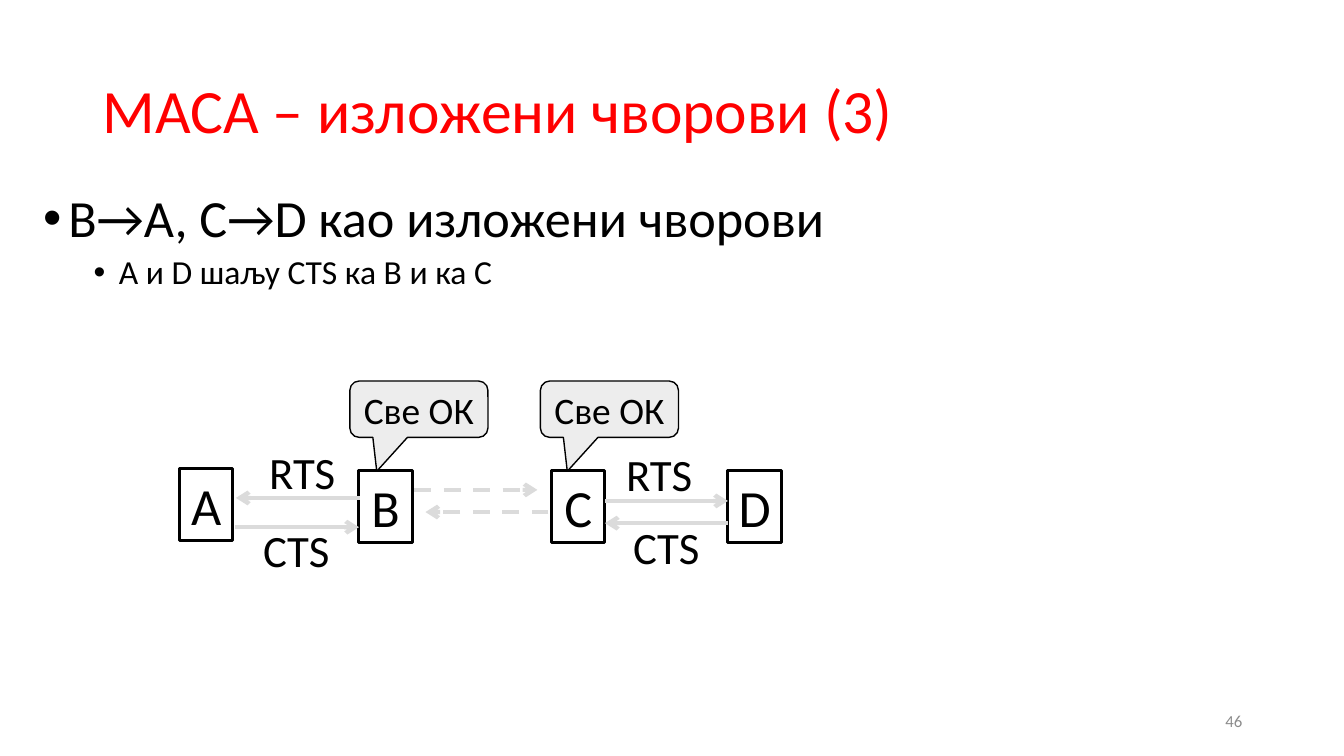
from dataclasses import dataclass

from lxml import etree
from pptx import Presentation
from pptx.dml.color import RGBColor
from pptx.enum.dml import MSO_LINE_DASH_STYLE as Dash
from pptx.enum.shapes import MSO_CONNECTOR, MSO_SHAPE
from pptx.enum.text import MSO_ANCHOR as Anchor, PP_ALIGN as Align
from pptx.oxml.ns import qn
from pptx.util import Pt

PX = 9144  # EMU per px, 100 px to the inch
FONT = "Calibri"
COLORS = {"title": "FF0000", "ink": "000000", "number": "8C8C8C",
          "arrow": "DBDBDB", "callout": "EDEDED"}


@dataclass(frozen=True)
class Box:
    left: int
    top: int
    width: int
    height: int

    def emu(self) -> tuple[int, ...]:
        return tuple(v * PX for v in (self.left, self.top, self.width, self.height))


@dataclass(frozen=True)
class Line:
    text: str
    size: float
    color: str = "ink"
    align: Align = Align.LEFT
    spacing: float = 1.0
    before: int = 0
    bullet_indent: int = 0  # px, 0 means no bullet
    level: int = 0


@dataclass(frozen=True)
class Arrow:
    start: int
    end: int
    y: int
    dashed: bool = False


@dataclass(frozen=True)
class Label:
    text: str
    left: int
    top: int


NODES = {"D": (722, 467), "C": (547, 467), "B": (356, 467), "A": (178, 465)}
ARROWS = [
    Arrow(600, 722, 497), Arrow(357, 234, 494),
    Arrow(411, 533, 486, True), Arrow(544, 422, 508, True),
    Arrow(722, 600, 519), Arrow(233, 356, 523),
]
LABELS = [Label("RTS", 621, 443), Label("RTS", 267, 441),
          Label("CTS", 628, 516), Label("CTS", 261, 519)]
CALLOUT_LEFTS = [536, 347]
CALLOUT_ADJUSTMENTS = [-0.305, 1.1, 0.167]


def rgb(name: str) -> RGBColor:
    return RGBColor.from_string(COLORS[name])


def add_bullet(paragraph, indent: int) -> None:
    properties = paragraph._p.get_or_add_pPr()
    properties.set("marL", str(indent * PX))
    properties.set("indent", str(-25 * PX))
    etree.SubElement(properties, qn("a:buFont"), typeface="Arial")
    etree.SubElement(properties, qn("a:buChar"), char="•")


def write(shape, lines: list[Line], anchor=Anchor.TOP, wrap=True,
          margins: tuple[int, int] = (10, 5)) -> None:
    """Fill a shape with lines; margins are horizontal and vertical px."""
    frame = shape.text_frame
    across, down = (margin * PX for margin in margins)
    frame_format = {
        "word_wrap": wrap, "vertical_anchor": anchor,
        "margin_left": across, "margin_right": across,
        "margin_top": down, "margin_bottom": down,
    }
    for name, value in frame_format.items():
        setattr(frame, name, value)
    for index, line in enumerate(lines):
        paragraph = frame.add_paragraph() if index else frame.paragraphs[0]
        paragraph_format = {
            "alignment": line.align, "line_spacing": line.spacing,
            "space_before": Pt(line.before), "level": line.level,
        }
        for name, value in paragraph_format.items():
            setattr(paragraph, name, value)
        if line.bullet_indent:
            add_bullet(paragraph, line.bullet_indent)
        run = paragraph.add_run()
        run.text = line.text
        run.font.name = FONT
        run.font.size = Pt(line.size)
        run.font.color.rgb = rgb(line.color)


def add_text(slide, box: Box, lines: list[Line], **layout) -> None:
    write(slide.shapes.add_textbox(*box.emu()), lines, **layout)


def add_outlined(slide, kind: MSO_SHAPE, box: Box, line_width: float):
    shape = slide.shapes.add_shape(kind, *box.emu())
    shape.shadow.inherit = False
    shape.fill.background()
    shape.line.color.rgb = rgb("ink")
    shape.line.width = Pt(line_width)
    return shape


def add_node(slide, name: str, left: int, top: int) -> None:
    shape = add_outlined(slide, MSO_SHAPE.RECTANGLE, Box(left, top, 53, 71), 2.25)
    write(shape, [Line(name, 37.3, align=Align.CENTER)], Anchor.MIDDLE, wrap=False)


def add_callout(slide, left: int) -> None:
    shape = add_outlined(slide, MSO_SHAPE.ROUNDED_RECTANGULAR_CALLOUT,
                         Box(left, 378, 137, 56), 1)
    for index, value in enumerate(CALLOUT_ADJUSTMENTS):
        shape.adjustments[index] = value
    shape.fill.solid()
    shape.fill.fore_color.rgb = rgb("callout")
    write(shape, [Line("Све ОК", 26.7, align=Align.CENTER)], Anchor.MIDDLE,
          margins=(0, 5))


def add_arrow(slide, arrow: Arrow) -> None:
    y = arrow.y * PX
    connector = slide.shapes.add_connector(
        MSO_CONNECTOR.STRAIGHT, arrow.start * PX, y, arrow.end * PX, y)
    connector.line.color.rgb = rgb("arrow")
    connector.line.width = Pt(3)
    if arrow.dashed:
        connector.line.dash_style = Dash.DASH
    etree.SubElement(connector.line._get_or_add_ln(), qn("a:tailEnd"), type="arrow")
    etree.SubElement(connector._element.spPr, qn("a:effectLst"))


def main() -> None:
    presentation = Presentation()
    presentation.slide_width = 1333 * PX
    presentation.slide_height = 750 * PX
    slide = presentation.slides.add_slide(presentation.slide_layouts[6])

    add_text(slide, Box(942, 695, 300, 40),
             [Line("46", 12, "number", Align.RIGHT)], anchor=Anchor.MIDDLE)
    add_text(slide, Box(92, 40, 1150, 145),
             [Line("MACA – изложени чворови (3)", 44, "title", spacing=0.9)],
             anchor=Anchor.MIDDLE)
    add_text(slide, Box(33, 186, 833, 489), [
        Line("B→A, C→D као изложени чворови", 37.3, spacing=0.9,
             before=10, bullet_indent=25),
        Line("A и D шаљу CTS ка B и ка C", 24, spacing=0.9,
             before=5, bullet_indent=75, level=1),
    ])
    for name, (left, top) in NODES.items():
        add_node(slide, name, left, top)
    for arrow in ARROWS:
        add_arrow(slide, arrow)
    for label in LABELS:
        add_text(slide, Box(label.left, label.top, 66, 54),
                 [Line(label.text, 32)], wrap=False, margins=(0, 0))
    for left in CALLOUT_LEFTS:
        add_callout(slide, left)

    presentation.save("out.pptx")


if __name__ == "__main__":
    main()
